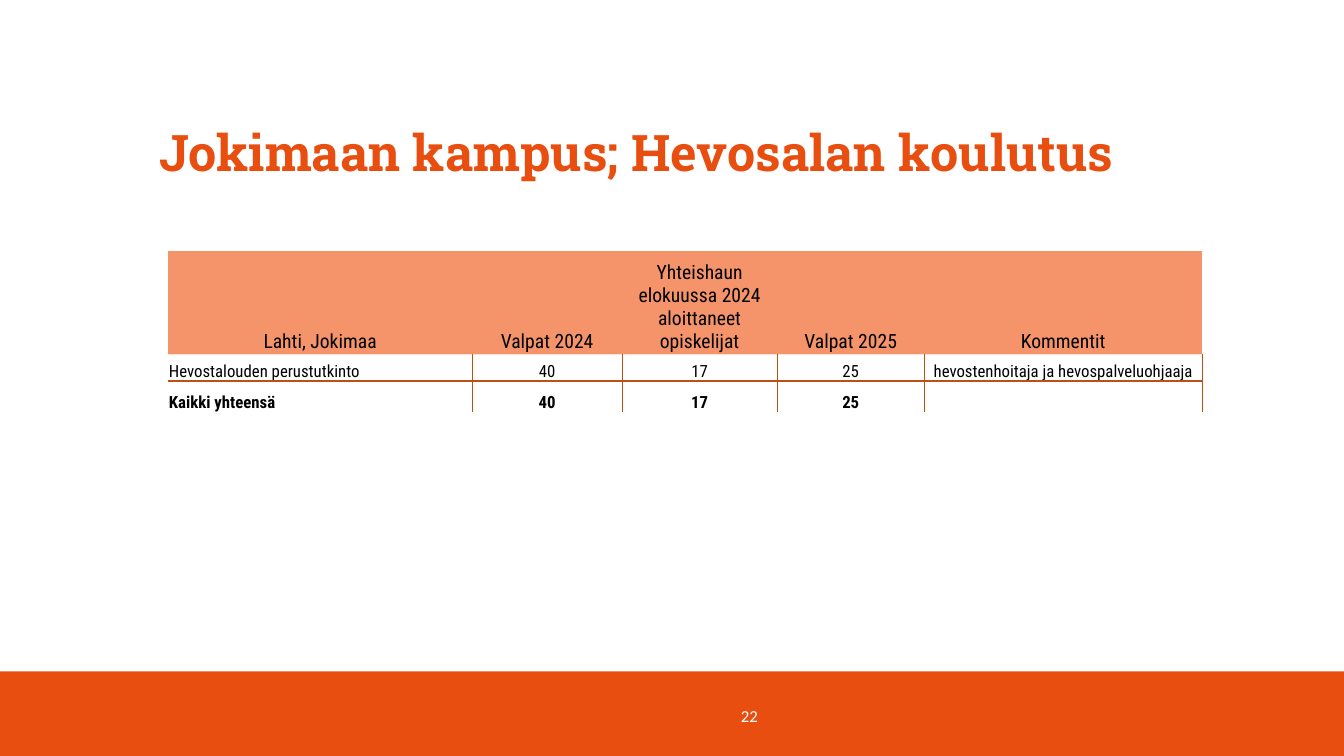
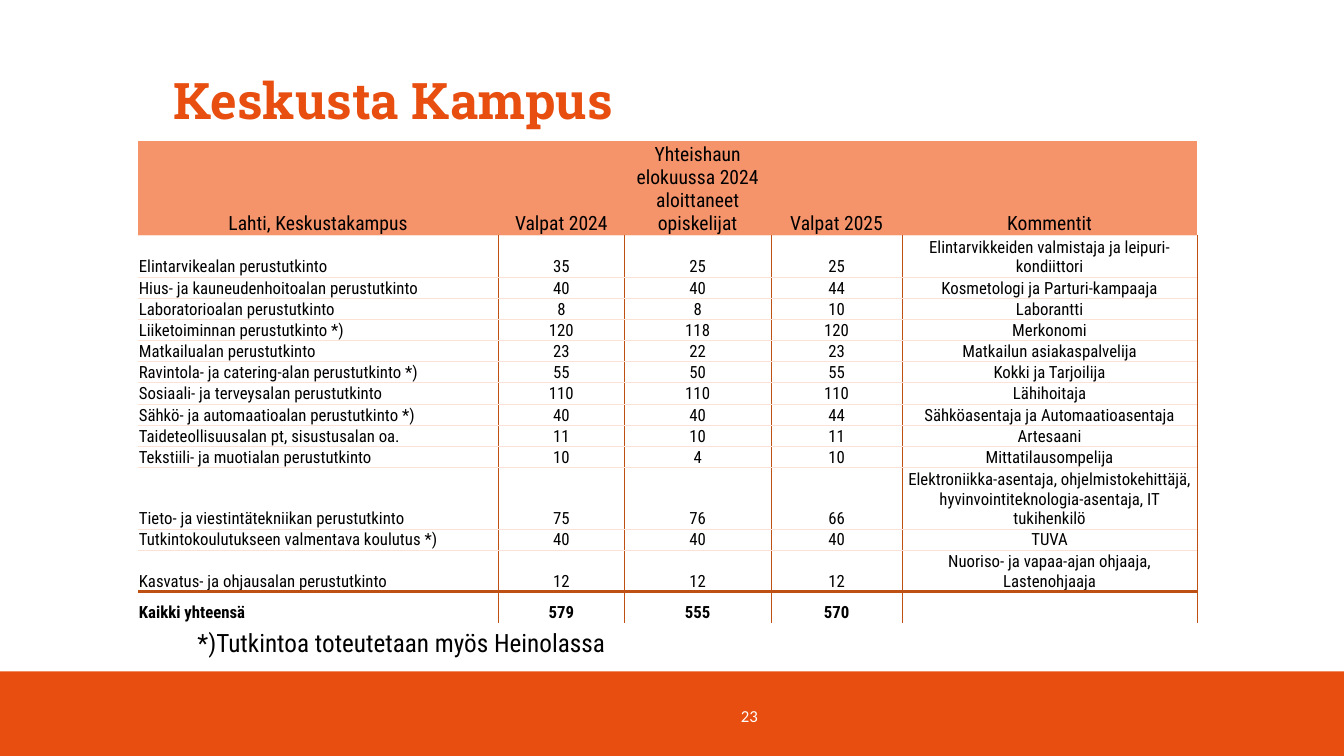
from lxml import etree
from pptx import Presentation
from pptx.dml.color import RGBColor
from pptx.enum import shapes, text
from pptx.oxml import ns
from pptx.util import Pt

# Content
HEADERS = ["Valpat 2024", "Yhteishaun elokuussa 2024 aloittaneet opiskelijat",
           "Valpat 2025", "Kommentit"]
TOTAL = "Kaikki yhteensä"
SLIDES = [
    {
        "number": 22,
        "title": "Jokimaan kampus; Hevosalan koulutus",
        "title_box": (106.5, 114.5, 720, 19.5),
        "campus": "Lahti, Jokimaa",
        "table_at": (120, 179.3),
        "widths": (217.5, 106.7, 111.2, 104.7, 198.9),
        "heights": (73.5, 19.5),
        "rows": [
            ("Hevostalouden perustutkinto", 40, 17, 25, "hevostenhoitaja ja hevospalveluohjaaja"),
        ],
    },
    {
        "number": 23,
        "title": "Keskusta Kampus",
        "title_box": (116.5, 58.5, 720, 38),
        "campus": "Lahti, Keskustakampus",
        "table_at": (98.5, 100.4),
        "widths": (257.5, 90, 104.7, 93.8, 210.5),
        "heights": (67.5, 15),
        "rows": [
            ("Elintarvikealan perustutkinto", 35, 25, 25,
             "Elintarvikkeiden valmistaja ja leipuri-kondiittori"),
            ("Hius- ja kauneudenhoitoalan perustutkinto", 40, 40, 44, "Kosmetologi ja Parturi-kampaaja"),
            ("Laboratorioalan perustutkinto", 8, 8, 10, "Laborantti"),
            ("Liiketoiminnan perustutkinto *)", 120, 118, 120, "Merkonomi"),
            ("Matkailualan perustutkinto", 23, 22, 23, "Matkailun asiakaspalvelija"),
            ("Ravintola- ja catering-alan perustutkinto *)", 55, 50, 55, "Kokki ja Tarjoilija"),
            ("Sosiaali- ja terveysalan perustutkinto", 110, 110, 110, "Lähihoitaja"),
            ("Sähkö- ja automaatioalan perustutkinto *)", 40, 40, 44,
             "Sähköasentaja ja Automaatioasentaja"),
            ("Taideteollisuusalan pt, sisustusalan oa.", 11, 10, 11, "Artesaani"),
            ("Tekstiili- ja muotialan perustutkinto", 10, 4, 10, "Mittatilausompelija"),
            ("Tieto- ja viestintätekniikan perustutkinto", 75, 76, 66,
             "Elektroniikka-asentaja, ohjelmistokehittäjä, hyvinvointiteknologia-asentaja, IT tukihenkilö"),
            ("Tutkintokoulutukseen valmentava koulutus *)", 40, 40, 40, "TUVA"),
            ("Kasvatus- ja ohjausalan perustutkinto", 12, 12, 12,
             "Nuoriso- ja vapaa-ajan ohjaaja, Lastenohjaaja"),
        ],
        "footnote": "*)Tutkintoa toteutetaan myös Heinolassa",
    },
]

# Shared look
COLORS = {"orange": "E84E0F", "header": "F5936B", "rust": "BE5014",
          "pale": "FBE2D5", "white": "FFFFFF", "black": "000000"}
STYLES = {
    "title": {"name": "Roboto Slab", "size": Pt(36), "bold": True, "color": "orange"},
    "number": {"name": "Calibri", "size": Pt(12), "color": "white"},
    "header": {"name": "Roboto Condensed", "size": Pt(14), "bold": False, "color": "black"},
    "body": {"name": "Roboto Condensed", "size": Pt(12), "bold": False, "color": "black"},
    "total": {"name": "Roboto Condensed", "size": Pt(12), "bold": True, "color": "black"},
    "footnote": {"name": "Roboto Condensed", "size": Pt(18), "color": "black"},
}
WIDTH, HEIGHT = 960, 540
BAND = (0, 479.5, WIDTH, 60.5)
NUMBER_BOX = (332.5, 497, 216, 28.8)
FOOTNOTE_BOX = (98.5, 444.2, 376.5, 29)
CELL_FORMAT = {"margin_left": Pt(0.7), "margin_right": Pt(0.7), "margin_top": Pt(0.7),
               "margin_bottom": 0, "vertical_anchor": text.MSO_ANCHOR.BOTTOM}
PALE, RUST, THICK = ("pale", 0.5), ("rust", 0.5), ("rust", 2)
LEFT, CENTER, RIGHT = text.PP_ALIGN.LEFT, text.PP_ALIGN.CENTER, text.PP_ALIGN.RIGHT


def rgb(name):
    return RGBColor.from_string(COLORS[name])


def points(values):
    return [Pt(v) for v in values]


def write(tf, words, style, align):
    p = tf.paragraphs[0]
    p.alignment = align
    r = p.add_run()
    r.text = words
    for key, value in STYLES[style].items():
        if key == "color":
            r.font.color.rgb = rgb(value)
        else:
            setattr(r.font, key, value)
    return p


def add_text(s, box, words, style, align, anchor):
    tf = s.shapes.add_textbox(*points(box)).text_frame
    tf.word_wrap = True
    tf.vertical_anchor = anchor
    write(tf, words, style, align)


def set_borders(cell, borders):
    tcPr = cell._tc.get_or_add_tcPr()
    for side in "LRTB":
        ln = etree.SubElement(tcPr, ns.qn(f"a:ln{side}"))
        if borders.get(side):
            color, width = borders[side]
            ln.set("w", str(Pt(width)))
            fill = etree.SubElement(ln, ns.qn("a:solidFill"))
            etree.SubElement(fill, ns.qn("a:srgbClr")).set("val", COLORS[color])
        else:
            etree.SubElement(ln, ns.qn("a:noFill"))


def cell_borders(row, col, last):
    if row == 0:
        return {"B": PALE}
    return {"L": RUST if col else None, "R": RUST,
            "T": THICK if row == last else PALE,
            "B": {last: None, last - 1: THICK}.get(row, PALE)}


def add_table(s, data):
    columns = list(zip(*data["rows"]))
    totals = [sum(column) for column in columns[1:4]]
    rows = [(data["campus"], *HEADERS), *data["rows"], (TOTAL, *totals, "")]
    last = len(rows) - 1
    header_height, row_height = data["heights"]
    size = (sum(data["widths"]), header_height + last * row_height)
    table = s.shapes.add_table(len(rows), len(rows[0]), *points(data["table_at"] + size)).table
    table.first_row = table.horz_banding = False
    for column, width in zip(table.columns, data["widths"]):
        column.width = Pt(width)
    for i, row in enumerate(rows):
        table.rows[i].height = Pt(row_height if i else header_height)
        style = {0: "header", last: "total"}.get(i, "body")
        for j, value in enumerate(row):
            cell = table.cell(i, j)
            for key, setting in CELL_FORMAT.items():
                setattr(cell, key, setting)
            set_borders(cell, cell_borders(i, j, last))
            if i == 0:
                cell.fill.solid()
                cell.fill.fore_color.rgb = rgb("header")
            else:
                cell.fill.background()
            write(cell.text_frame, str(value), style, LEFT if i and not j else CENTER)


def add_frame(prs, data):
    """Slide with title, bottom band and slide number."""
    s = prs.slides.add_slide(prs.slide_layouts[5])
    title = s.shapes.title
    title.left, title.top, title.width, title.height = points(data["title_box"])
    tf = title.text_frame
    tf.auto_size = text.MSO_AUTO_SIZE.NONE
    tf.word_wrap = True
    tf.vertical_anchor = text.MSO_ANCHOR.BOTTOM
    write(tf, data["title"], "title", LEFT).line_spacing = 0.9
    band = s.shapes.add_shape(shapes.MSO_SHAPE.RECTANGLE, *points(BAND))
    band.shadow.inherit = False
    band.fill.solid()
    band.fill.fore_color.rgb = rgb("orange")
    band.line.fill.background()
    add_text(s, NUMBER_BOX, str(data["number"]), "number", RIGHT, text.MSO_ANCHOR.MIDDLE)
    return s


def main():
    prs = Presentation()
    prs.slide_width, prs.slide_height = Pt(WIDTH), Pt(HEIGHT)
    for data in SLIDES:
        s = add_frame(prs, data)
        add_table(s, data)
        if "footnote" in data:
            add_text(s, FOOTNOTE_BOX, data["footnote"], "footnote", CENTER, text.MSO_ANCHOR.TOP)
    prs.save("out.pptx")


if __name__ == "__main__":
    main()
